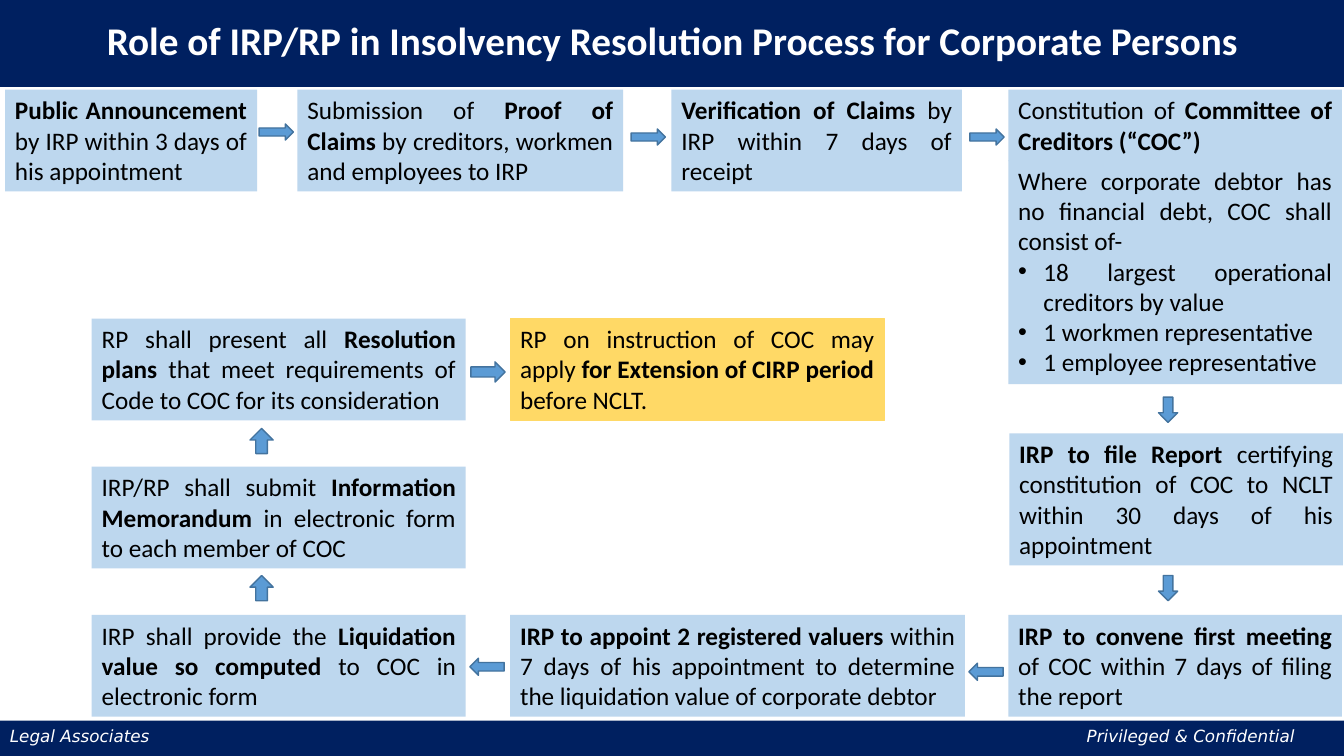
from lxml import etree
from pptx import Presentation
from pptx.dml.color import RGBColor
from pptx.enum.shapes import MSO_SHAPE
from pptx.enum.text import MSO_ANCHOR, MSO_AUTO_SIZE, PP_ALIGN
from pptx.oxml.ns import qn
from pptx.util import Pt

RECT = MSO_SHAPE.RECTANGLE
RIGHT, LEFT = MSO_SHAPE.RIGHT_ARROW, MSO_SHAPE.LEFT_ARROW
UP, DOWN = MSO_SHAPE.UP_ARROW, MSO_SHAPE.DOWN_ARROW
TOP, MIDDLE = MSO_ANCHOR.TOP, MSO_ANCHOR.MIDDLE
FIT_SHAPE = MSO_AUTO_SIZE.SHAPE_TO_FIT_TEXT
ALIGN_LEFT, CENTER, JUSTIFY = PP_ALIGN.LEFT, PP_ALIGN.CENTER, PP_ALIGN.JUSTIFY

NAVY = RGBColor(0x00, 0x20, 0x60)
WHITE = RGBColor(0xFF, 0xFF, 0xFF)
BLACK = RGBColor(0x00, 0x00, 0x00)
PALE_BLUE = RGBColor(0xBD, 0xD7, 0xEE)
YELLOW = RGBColor(0xFF, 0xD9, 0x66)
ARROW_BLUE = RGBColor(0x5B, 0x9B, 0xD5)
ARROW_EDGE = RGBColor(0x43, 0x73, 0x9E)

PX = 9144
SLIDE_W, SLIDE_H = 1333, 750
ROW_TOP, ROW_PLANS, ROW_MEMO, ROW_VALUE = 89, 316, 463, 610
COL_LEFT, COL_MID, COL_RIGHT = 91, 506, 1000
SIDE_W, COC_W = 371, 331
TWO_LINES, THREE_LINES, FOUR_LINES, SEVEN_LINES = 71, 101, 131, 222
ARROW_LONG, ARROW_THIN, ARROW_RISE = 34, 16, 25
FOOTER_TAB = 1068
BULLET_INDENT = 25

TITLE = "Role of IRP/RP in Insolvency Resolution Process for Corporate Persons"
FOOTER = "Legal Associates\tPrivileged & Confidential"

STEPS = [
    ((5, ROW_TOP, 250, THREE_LINES), PALE_BLUE,
     ["*Public Announcement *by IRP within 3 days of his appointment"]),
    ((295, ROW_TOP, 323, THREE_LINES), PALE_BLUE,
     ["Submission of *Proof of Claims* by creditors, workmen and employees to IRP"]),
    ((666, ROW_TOP, 288, THREE_LINES), PALE_BLUE,
     ["*Verification of Claims *by IRP within 7 days of receipt"]),
    ((COL_RIGHT, ROW_TOP, COC_W, TWO_LINES), PALE_BLUE,
     ["Constitution of *Committee of Creditors (“COC”)*"]),
    ((COL_RIGHT, 159, COC_W, SEVEN_LINES), PALE_BLUE,
     ["Where corporate debtor has no financial debt, COC shall consist of-",
      "•18 largest operational creditors by value",
      "•1 workmen representative",
      "•1 employee representative"]),
    ((COL_RIGHT + 1, 430, COC_W, FOUR_LINES), PALE_BLUE,
     ["*IRP to file Report *certifying constitution of COC to NCLT "
      "within 30 days of his appointment"]),
    ((COL_RIGHT, ROW_VALUE, COC_W, THREE_LINES), PALE_BLUE,
     ["*IRP to convene first meeting *of COC within 7 days of filing the report"]),
    ((COL_MID, ROW_VALUE, 451, THREE_LINES), PALE_BLUE,
     ["*IRP to appoint 2 registered valuers *within 7 days of his appointment "
      "to determine the liquidation value of corporate debtor"]),
    ((COL_LEFT, ROW_VALUE, SIDE_W, THREE_LINES), PALE_BLUE,
     ["IRP shall provide the *Liquidation value so computed *to COC in electronic form"]),
    ((COL_LEFT, ROW_MEMO, SIDE_W, THREE_LINES), PALE_BLUE,
     ["IRP/RP shall submit *Information Memorandum* in electronic form "
      "to each member of COC"]),
    ((COL_LEFT, ROW_PLANS, SIDE_W, THREE_LINES), PALE_BLUE,
     ["RP shall present all *Resolution plans* that meet requirements "
      "of Code to COC for its consideration"]),
    ((COL_MID, ROW_PLANS, SIDE_W, THREE_LINES), YELLOW,
     ["RP on instruction of COC may apply *for Extension of CIRP period* before NCLT."]),
]

ARROWS = [
    (RIGHT, (257, 123, ARROW_LONG, ARROW_THIN)),
    (RIGHT, (626, 128, ARROW_LONG, ARROW_THIN)),
    (RIGHT, (962, 128, ARROW_LONG, ARROW_THIN)),
    (DOWN, (1149, 394, 19, ARROW_RISE)),
    (DOWN, (1149, 571, 19, ARROW_RISE)),
    (LEFT, (961, 658, ARROW_LONG, 17)),
    (LEFT, (466, 653, ARROW_LONG, 17)),
    (UP, (248, 571, 23, ARROW_RISE)),
    (UP, (248, 425, 23, ARROW_RISE)),
    (RIGHT, (467, 359, ARROW_LONG, 20)),
]

deck = Presentation()
deck.slide_width, deck.slide_height = SLIDE_W * PX, SLIDE_H * PX
slide = deck.slides.add_slide(deck.slide_layouts[6])


def add_block(kind, place, fill, edge=None, edge_width=1):
    block = slide.shapes.add_shape(kind, *(length * PX for length in place))
    block.shadow.inherit = False
    block.fill.solid()
    block.fill.fore_color.rgb = fill
    if edge is None:
        block.line.fill.background()
    else:
        block.line.color.rgb = edge
        block.line.width = Pt(edge_width)
    return block


def add_run(paragraph, words, size, color, face="Calibri", bold=False, italic=False):
    run = paragraph.add_run()
    run.text = words
    font = run.font
    font.size, font.name, font.bold, font.italic = Pt(size), face, bold, italic
    font.color.rgb = color


def write_step(frame, lines):
    frame.word_wrap = True
    frame.vertical_anchor = TOP
    frame.auto_size = FIT_SHAPE
    for number, line in enumerate(lines):
        paragraph = frame.add_paragraph() if number else frame.paragraphs[0]
        paragraph.alignment = JUSTIFY
        if line.startswith("•"):
            settings = paragraph._p.get_or_add_pPr()
            settings.set("marL", str(BULLET_INDENT * PX))
            settings.set("indent", str(-BULLET_INDENT * PX))
            etree.SubElement(settings, qn("a:buFont"), typeface="Arial")
            etree.SubElement(settings, qn("a:buChar"), char="•")
        for part, words in enumerate(line.lstrip("•").split("*")):
            if words:
                add_run(paragraph, words, 18, BLACK, bold=part % 2 == 1)


title_bar = add_block(RECT, (-1, -3, 1335, 90), NAVY, WHITE).text_frame
title_bar.word_wrap = True
title_bar.vertical_anchor = MIDDLE
heading = title_bar.paragraphs[0]
heading.alignment = CENTER
heading.line_spacing = 0.9
add_run(heading, TITLE, 28, WHITE, bold=True)

footer_bar = add_block(RECT, (0, 715, SLIDE_W, 35), NAVY).text_frame
footer_bar.word_wrap = True
footer_bar.vertical_anchor = TOP
footer_line = footer_bar.paragraphs[0]
footer_line.alignment = ALIGN_LEFT
tab_stops = etree.SubElement(footer_line._p.get_or_add_pPr(), qn("a:tabLst"))
etree.SubElement(tab_stops, qn("a:tab"), pos=str(FOOTER_TAB * PX), algn="l")
add_run(footer_line, FOOTER, 12, WHITE, face="DejaVu Sans", italic=True)

for place, fill, lines in STEPS:
    edge = YELLOW if fill == YELLOW else None
    write_step(add_block(RECT, place, fill, edge, 0.75).text_frame, lines)

for kind, place in ARROWS:
    add_block(kind, place, ARROW_BLUE, ARROW_EDGE)

deck.save("out.pptx")
